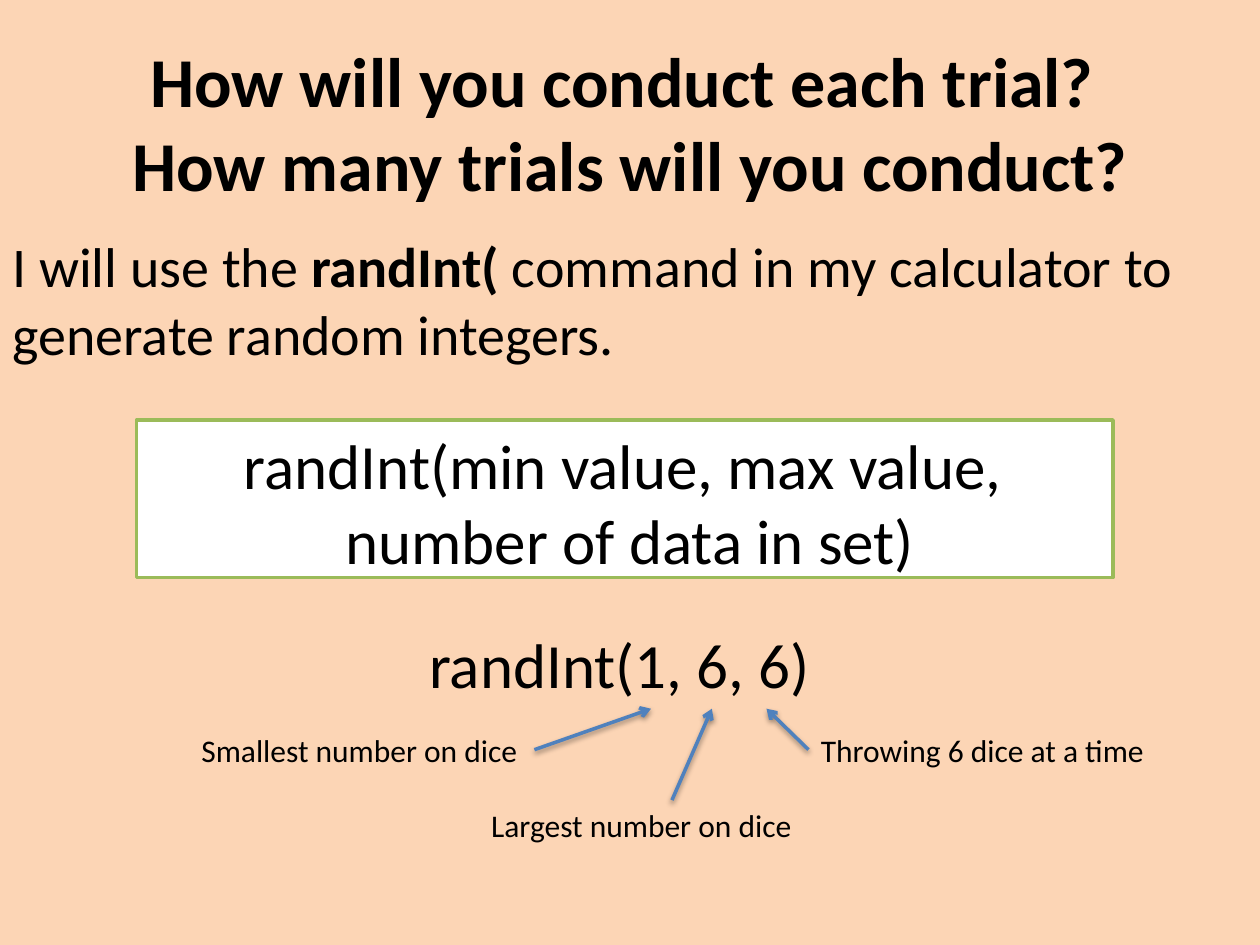
from lxml.etree import SubElement
from pptx import Presentation
from pptx.dml.color import RGBColor
from pptx.enum.shapes import MSO_CONNECTOR as Conn, MSO_SHAPE as Shape
from pptx.enum.text import MSO_AUTO_SIZE as Fit, PP_ALIGN as Align
from pptx.oxml.ns import qn
from pptx.util import Inches, Pt

COLS, ROWS = 120, 90  # grid over the whole slide
TOP, LEFT, BOTTOM, RIGHT = range(4)  # connection sites


def rgb(color):
    return RGBColor.from_string(color)


class Deck:
    font, ink = "Calibri", "000000"
    paper, panel = "FCD5B5", "FFFFFF"
    border, arrow_color, stroke = "9BBB59", "4F81BD", 2

    def __init__(self):
        self.prs = Presentation()
        self.prs.slide_width, self.prs.slide_height = Inches(10), Inches(7.5)
        self.s = self.prs.slides.add_slide(self.prs.slide_layouts[6])
        fill = self.s.background.fill
        fill.solid()
        fill.fore_color.rgb = rgb(self.paper)

    def grid(self, *values):
        """Alternating columns and rows as slide lengths."""
        units = (self.prs.slide_width / COLS, self.prs.slide_height / ROWS)
        return [round(v * units[i % 2]) for i, v in enumerate(values)]

    def text(self, at, lines, size, align=Align.CENTER, bold=False, wrap=True):
        """Each line is a list of (text, bold) runs or a plain string."""
        sp = self.s.shapes.add_textbox(*self.grid(*at))
        tf = sp.text_frame
        tf.word_wrap, tf.auto_size = wrap, Fit.SHAPE_TO_FIT_TEXT
        p = tf.paragraphs[0]
        p.alignment = align
        p.font.name, p.font.size = self.font, Pt(size)
        p.font.color.rgb = rgb(self.ink)
        for i, line in enumerate(lines):
            if i:
                p.add_line_break()
            for words, strong in [(line, bold)] if isinstance(line, str) else line:
                r = p.add_run()
                r.text, r.font.bold = words, strong
                r.font.name, r.font.size = self.font, Pt(size)
                r.font.color.rgb = rgb(self.ink)
        return sp

    def label(self, at, words):
        return self.text(at, [words], 18, Align.LEFT, wrap=False)

    def box(self, at):
        sp = self.s.shapes.add_shape(Shape.RECTANGLE, *self.grid(*at))
        sp.shadow.inherit = False
        sp.fill.solid()
        sp.fill.fore_color.rgb = rgb(self.panel)
        sp.line.color.rgb, sp.line.width = rgb(self.border), Pt(self.stroke)

    def arrow(self, start, end, source=None, site=None):
        c = self.s.shapes.add_connector(Conn.STRAIGHT, *self.grid(*start, *end))
        if source is not None:
            c.begin_connect(source, site)
        c.line.color.rgb, c.line.width = rgb(self.arrow_color), Pt(self.stroke)
        sp_pr = c._element.spPr
        SubElement(sp_pr.find(qn("a:ln")), qn("a:tailEnd"), type="arrow")
        # Soft shadow straight below the line
        effects = SubElement(sp_pr, qn("a:effectLst"))
        shadow = SubElement(effects, qn("a:outerShdw"), blurRad=str(Pt(3.1)),
                            dist=str(Pt(1.6)), dir="5400000", rotWithShape="0")
        color = SubElement(shadow, qn("a:srgbClr"), val=self.ink)
        SubElement(color, qn("a:alpha"), val="38000")


def main():
    d = Deck()

    # Title and answer
    d.text((0, 3, COLS, 23.9), ["How will you conduct each trial? ",
                                "How many trials will you conduct?"], 40, bold=True)
    d.text((0, 21.5, COLS, 14.2),
           [[("I will use the ", False), ("randInt( ", True),
             ("command in my calculator to generate random integers.", False)]],
           32, Align.LEFT)

    # Command syntax
    d.box((13, 40, 93, 15))
    d.text((0, 40, COLS, 15.7), ["randInt(min value, max value, ",
                                 "number of data in set)"], 36)

    # Worked example with its labels
    d.text((18, 59, 82, 8.5), ["randInt(1, 6, 6)"], 36)
    smallest = d.label((18, 69, 32.9, 4.8), "Smallest number on dice")
    d.label((45.6, 76.2, 31.6, 4.8), "Largest number on dice")
    throwing = d.label((77, 69, 33.6, 4.8), "Throwing 6 dice at a time")

    # Arrows from the labels to the arguments
    tip = 67.5
    d.arrow((50.9, 71.4), (62, tip), smallest, RIGHT)
    d.arrow((64, 76.2), (67.8, tip))
    d.arrow((77, 71.4), (73, tip), throwing, LEFT)

    d.prs.save("out.pptx")


if __name__ == "__main__":
    main()
